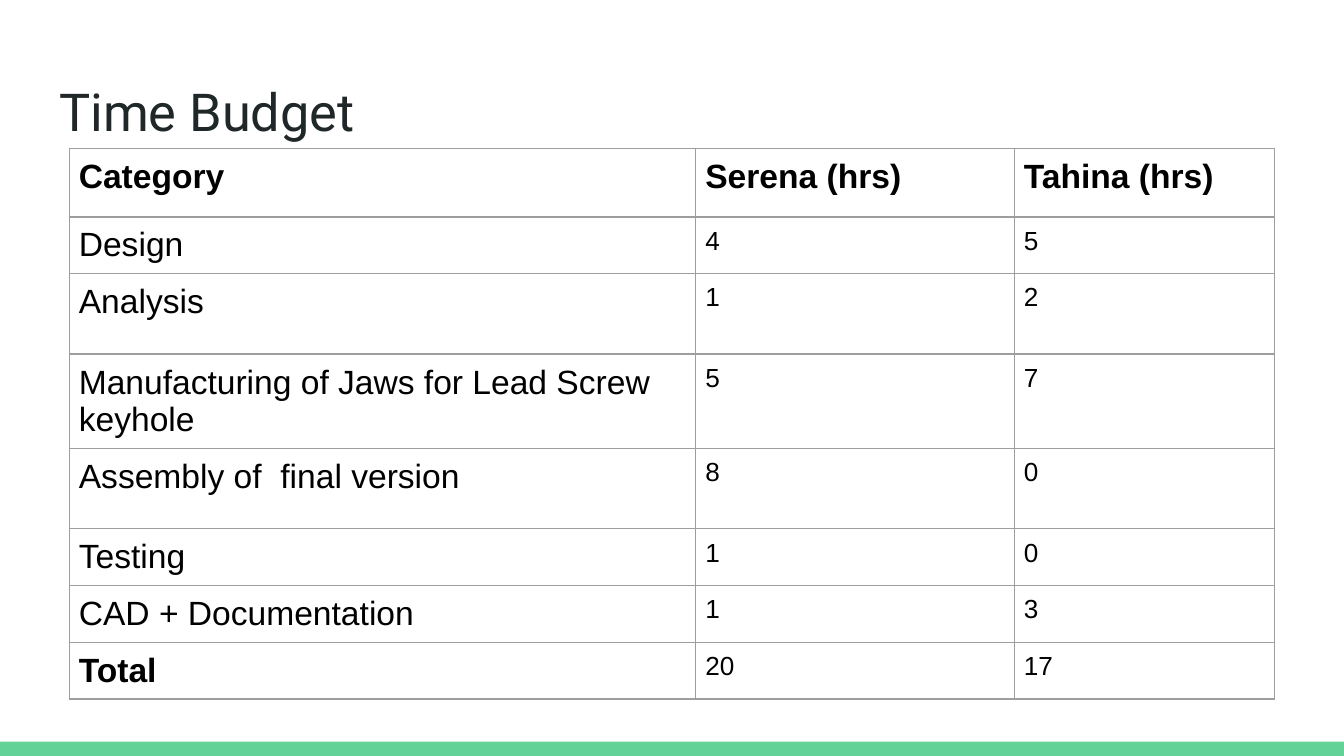
from dataclasses import dataclass

from lxml import etree
from pptx import Presentation
from pptx.dml.color import RGBColor
from pptx.enum.shapes import MSO_SHAPE
from pptx.enum.text import MSO_ANCHOR, PP_ALIGN
from pptx.oxml.ns import qn
from pptx.util import Cm, Pt

RECTANGLE = MSO_SHAPE.RECTANGLE
TOP = MSO_ANCHOR.TOP
LEFT = PP_ALIGN.LEFT
TITLE_ONLY = 5
PAGE_WIDTH, PAGE_HEIGHT = 25.4, 14.29


@dataclass(frozen=True)
class Theme:
    accent: str = "63D297"
    title_color: str = "202729"
    text_color: str = "000000"
    border_color: str = "9E9E9E"
    title_font: str = "Roboto"
    body_font: str = "Arial"
    title_size: int = 28
    label_size: int = 18
    value_size: int = 14
    border_width: float = 0.75


class SlideBuilder:
    """Holds the theme and the current page."""

    def __init__(self, page, theme):
        self.page = page
        self.theme = theme

    def add_span(self, para, text, font, size, color, bold=False):
        span = para.add_run()
        span.text = text
        span.font.name = font
        span.font.size = Pt(size)
        span.font.bold = bold
        span.font.color.rgb = RGBColor.from_string(color)

    def set_margins(self, target, margin):
        target.margin_left = target.margin_right = Cm(margin)
        target.margin_top = target.margin_bottom = Cm(margin)

    def add_band(self, left, top, width, height):
        band = self.page.shapes.add_shape(
            RECTANGLE, Cm(left), Cm(top), Cm(width), Cm(height))
        band.shadow.inherit = False
        band.fill.solid()
        band.fill.fore_color.rgb = RGBColor.from_string(self.theme.accent)
        band.line.fill.background()

    def add_title(self, text, left, top, width, height):
        box = self.page.shapes.title
        box.left, box.top = Cm(left), Cm(top)
        box.width, box.height = Cm(width), Cm(height)
        frame = box.text_frame
        frame.word_wrap = True
        frame.vertical_anchor = TOP
        self.set_margins(frame, 0.25)
        para = frame.paragraphs[0]
        para.alignment = LEFT
        self.add_span(para, text, self.theme.title_font,
                      self.theme.title_size, self.theme.title_color)

    def add_borders(self, cell):
        properties = cell._tc.get_or_add_tcPr()
        for position, side in enumerate(("lnL", "lnR", "lnT", "lnB")):
            line = etree.Element(qn(f"a:{side}"), w=str(Pt(self.theme.border_width)))
            fill = etree.SubElement(line, qn("a:solidFill"))
            etree.SubElement(fill, qn("a:srgbClr"), val=self.theme.border_color)
            properties.insert(position, line)

    def add_table(self, rows, left, top, widths, heights):
        table = self.page.shapes.add_table(
            len(rows), len(widths), Cm(left), Cm(top),
            Cm(sum(widths)), Cm(sum(heights))).table
        table.first_row = table.horz_banding = False
        for column, width in zip(table.columns, widths):
            column.width = Cm(width)
        for row, height in zip(table.rows, heights):
            row.height = Cm(height)

        # Headings and labels are large; hours are small
        for row_index, texts in enumerate(rows):
            for column_index, text in enumerate(texts):
                is_header = row_index == 0
                is_label = column_index == 0
                is_total = is_label and row_index == len(rows) - 1
                size = (self.theme.label_size if is_header or is_label
                        else self.theme.value_size)
                cell = table.cell(row_index, column_index)
                self.set_margins(cell, 0.18)
                cell.fill.background()
                self.add_borders(cell)
                self.add_span(cell.text_frame.paragraphs[0], text,
                              self.theme.body_font, size,
                              self.theme.text_color, is_header or is_total)


def main():
    deck = Presentation()
    deck.slide_width, deck.slide_height = Cm(PAGE_WIDTH), Cm(PAGE_HEIGHT)
    page = deck.slides.add_slide(deck.slide_layouts[TITLE_ONLY])
    builder = SlideBuilder(page, Theme())

    # Footer band
    band_height = 0.27
    builder.add_band(0, PAGE_HEIGHT - band_height, PAGE_WIDTH, band_height)

    # Title
    builder.add_title("Time Budget", 0.87, 1.24, 23.67, 1.59)

    # Hours by category
    hours = [
        ("Category", "Serena (hrs)", "Tahina (hrs)"),
        ("Design", "4", "5"),
        ("Analysis", "1", "2"),
        ("Manufacturing of Jaws for Lead Screw keyhole", "5", "7"),
        ("Assembly of  final version", "8", "0"),
        ("Testing", "1", "0"),
        ("CAD + Documentation", "1", "3"),
        ("Total", "20", "17"),
    ]
    short, tall = 1.02, 1.52
    builder.add_table(hours, 1.31, 2.8, widths=[11.84, 6.02, 4.92],
                      heights=[1.3, short, tall, 1.7, tall, short, short, short])

    deck.save("out.pptx")


if __name__ == "__main__":
    main()
